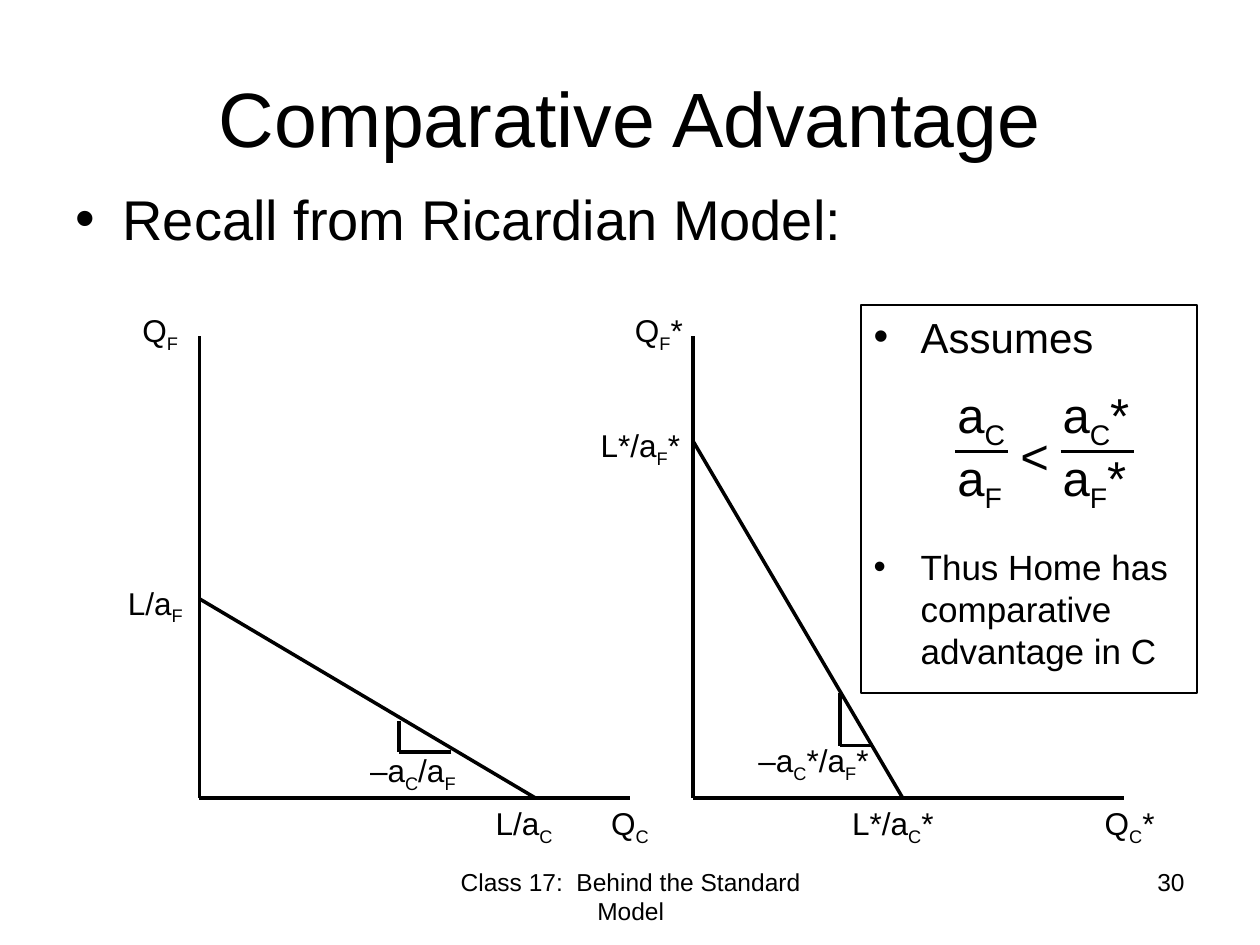
from pptx import Presentation
from pptx.dml.color import RGBColor
from pptx.enum.shapes import MSO_CONNECTOR, MSO_SHAPE
from pptx.enum.text import MSO_ANCHOR, PP_ALIGN
from pptx.oxml.ns import qn
from pptx.util import Cm, Pt
from lxml import etree

BLACK = RGBColor(0, 0, 0)
FONT = "Arial"
STRAIGHT = MSO_CONNECTOR.STRAIGHT
RECTANGLE = MSO_SHAPE.RECTANGLE
MIDDLE, TOP = MSO_ANCHOR.MIDDLE, MSO_ANCHOR.TOP
LEFT, CENTER, RIGHT = PP_ALIGN.LEFT, PP_ALIGN.CENTER, PP_ALIGN.RIGHT


def write(p, text, size, align=LEFT, bullet=False):
    p.alignment = align
    if bullet:
        pPr = p._p.get_or_add_pPr()
        pPr.set("marL", str(Cm(0.95)))
        pPr.set("indent", str(Cm(-0.95)))
        etree.SubElement(pPr, qn("a:buFont")).set("typeface", FONT)
        etree.SubElement(pPr, qn("a:buChar")).set("char", "•")
    head, *tails = text.split("_")
    pieces = [(head, False)]
    for tail in tails:
        pieces += [(tail[0], True), (tail[1:], False)]
    for piece, subscript in pieces:
        if piece:
            r = p.add_run()
            r.text = piece
            r.font.name = FONT
            r.font.size = Pt(size)
            r.font.color.rgb = BLACK
            if subscript:
                r.font._element.set("baseline", "-25000")


def add_line(shapes, x1, y1, x2, y2):
    line = shapes.add_connector(STRAIGHT, Cm(x1), Cm(y1), Cm(x2), Cm(y2))
    line.line.color.rgb = BLACK
    line.line.width = Pt(2)
    etree.SubElement(line._element.spPr, qn("a:effectLst"))


prs = Presentation()
prs.slide_width = Cm(25.4)
prs.slide_height = Cm(19.05)
s = prs.slides.add_slide(prs.slide_layouts[6])

for text, x, y, w, h, size, align, anchor, bullet in [
    ("Comparative Advantage", 1.27, 0.76, 22.86, 3.18, 44, CENTER, MIDDLE, False),
    ("Recall from Ricardian Model:", 1.27, 3.6, 22.86, 2.12, 32, LEFT, TOP, True),
    ("Class 17:  Behind the Standard Model", 8.69, 17.35, 8.05, 1.32, 14, CENTER, TOP, False),
    ("30", 18.2, 17.35, 5.93, 1.32, 14, RIGHT, TOP, False),
]:
    tf = s.shapes.add_textbox(Cm(x), Cm(y), Cm(w), Cm(h)).text_frame
    tf.word_wrap = True
    tf.vertical_anchor = anchor
    p = tf.paragraphs[0]
    write(p, text, size, align, bullet)
    if bullet:
        p.space_before = Pt(6.4)

BASE, AXIS_TOP, AXIS_WIDTH = 16.09, 6.77, 8.69
for origin, intercept_y, intercept_x, corner_x, corner_y, step_top, step_right in [
    (4.02, 12.07, 10.8, 8.04, 15.16, 14.53, 9.1),
    (13.97, 8.89, 18.2, 16.93, 15.03, 13.97, 17.57),
]:
    add_line(s.shapes, origin, BASE, origin + AXIS_WIDTH, BASE)
    add_line(s.shapes, origin, BASE, origin, AXIS_TOP)
    add_line(s.shapes, origin, intercept_y, intercept_x, BASE)
    add_line(s.shapes, corner_x, step_top, corner_x, corner_y)
    add_line(s.shapes, step_right, corner_y, corner_x, corner_y)

for text, x, y, w, wrap in [
    ("Q_F", 2.62, 6.15, 1.91, True),
    ("Q_C", 12.07, BASE, 1.91, True),
    ("Q_F*", 12.55, 6.15, 1.91, True),
    ("Q_C*", 22.02, BASE, 1.91, True),
    ("L/a_F", 2.33, 11.64, 1.68, False),
    ("L/a_C", 9.74, BASE, 1.7, False),
    ("L*/a_F*", 11.86, 8.46, 2.16, False),
    ("L*/a_C*", 16.93, BASE, 2.21, False),
    ("–a_C/a_F", 7.21, 15.01, 2.34, False),
    ("–a_C*/a_F*", 15.04, 14.82, 2.82, False),
]:
    tf = s.shapes.add_textbox(Cm(x), Cm(y), Cm(w), Cm(1.02)).text_frame
    tf.word_wrap = wrap
    write(tf.paragraphs[0], text, 18)

sp = s.shapes.add_shape(RECTANGLE, Cm(17.36), Cm(6.15), Cm(6.77), Cm(7.82))
sp.shadow.inherit = False
sp.fill.background()
sp.line.color.rgb = BLACK
sp.line.width = Pt(0.75)
tf = sp.text_frame
tf.word_wrap = True
tf.vertical_anchor = TOP
write(tf.paragraphs[0], "Assumes", 24, bullet=True)
p = tf.add_paragraph()
write(p, "Thus Home has comparative advantage in C", 20, bullet=True)
p.space_before = Pt(105)

inequality = s.shapes.add_group_shape()
for text, x, y, w in [
    ("a_C", 19.05, 7.62, 1.7),
    ("a_F", 19.05, 8.89, 1.7),
    ("<", 20.32, 8.46, 1.07),
    ("a_C*", 21.17, 7.62, 2.62),
    ("a_F*", 21.17, 8.89, 2.62),
]:
    tf = inequality.shapes.add_textbox(Cm(x), Cm(y), Cm(w), Cm(1.45)).text_frame
    tf.word_wrap = True
    write(tf.paragraphs[0], text, 28)
for left, right in [(19.26, 20.32), (21.38, 22.86)]:
    add_line(inequality.shapes, left, 9.1, right, 9.1)

prs.save("out.pptx")
